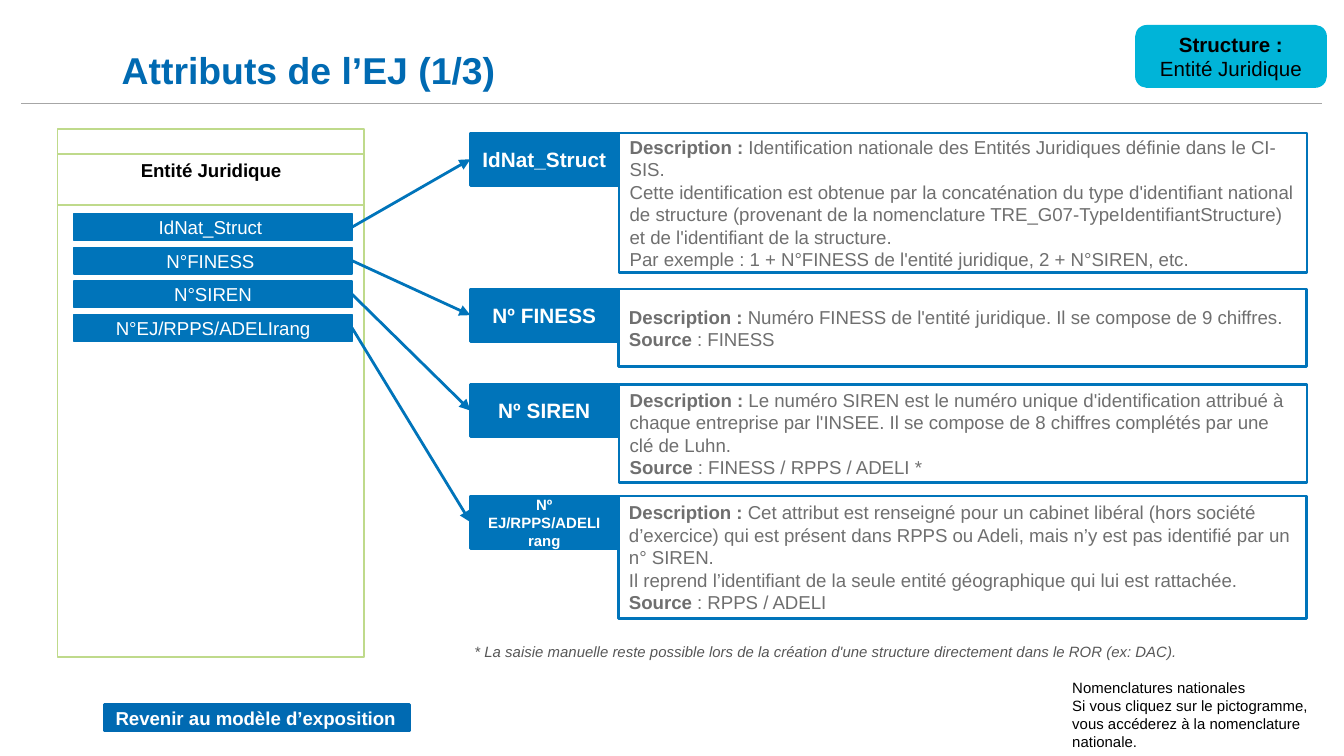
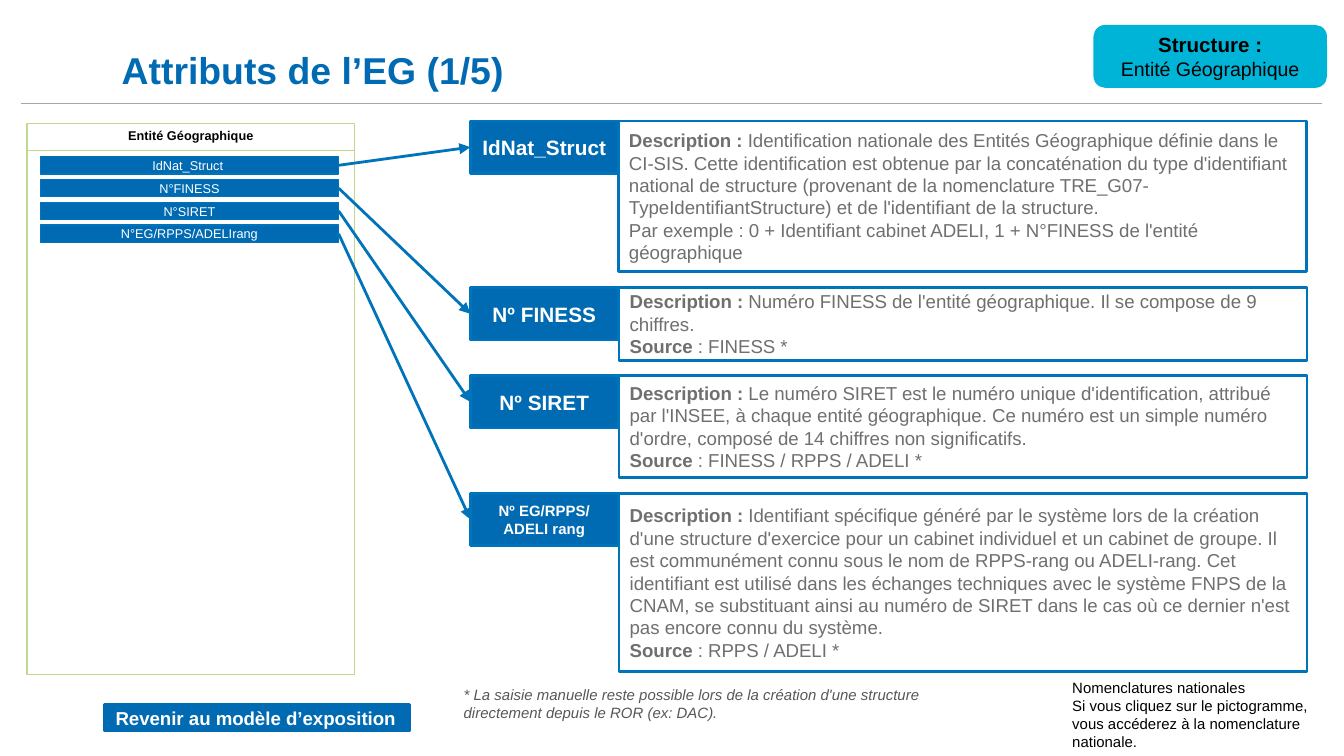
from dataclasses import dataclass
from typing import NamedTuple

import pptx
import pptx.dml.color
import pptx.enum.shapes
import pptx.enum.text
import pptx.oxml.ns
import pptx.util
from lxml import etree

EMU_PER_PX = 4572  # 200 px to the inch
FONT = "Arial"
BLUE, DARK_BLUE, CYAN, LIME = "0074BA", "006AB2", "00B4D8", "BFDA8B"
WHITE, BLACK, RULE_GREY, TEXT_GREY, NOTE_GREY = "FFFFFF", "000000", "A6A6A6", "6F6F6F", "575757"

RECT = pptx.enum.shapes.MSO_SHAPE.RECTANGLE
ROUNDED = pptx.enum.shapes.MSO_SHAPE.ROUNDED_RECTANGLE
STRAIGHT = pptx.enum.shapes.MSO_CONNECTOR.STRAIGHT
LEFT, CENTER = pptx.enum.text.PP_ALIGN.LEFT, pptx.enum.text.PP_ALIGN.CENTER
TOP = pptx.enum.text.MSO_ANCHOR.TOP
MIDDLE = pptx.enum.text.MSO_ANCHOR.MIDDLE
BOTTOM = pptx.enum.text.MSO_ANCHOR.BOTTOM

TAG_LEFT, TAG_WIDTH, TAG_HEIGHT = 700, 220, 78
DETAIL_WIDTH = 1024
BADGE_RIGHT = 1972


class Area(NamedTuple):
    left: int
    top: int
    width: int
    height: int


class Line(NamedTuple):
    """A paragraph: a bold lead followed by regular text."""
    lead: str
    rest: str


class Style(NamedTuple):
    size: float
    color: str
    bold: bool = False
    italic: bool = False
    align: int = LEFT
    anchor: int = MIDDLE
    inset: tuple[int, int] = (16, 24)


@dataclass(frozen=True)
class Attribute:
    field: str
    tag: str
    top: int
    height: int
    detail: list[Line]
    tag_size: float = 11.1
    detail_left: int = 921


@dataclass(frozen=True)
class EntityPage:
    title: str
    entity: str
    badge_width: int
    badge_size: float
    fill: str
    panel: Area
    header: Area
    header_style: Style
    first_field: Area
    field_pitch: int
    field_style: Style
    note: str
    note_area: Area
    attributes: list[Attribute]


def px(length: int) -> int:
    return length * EMU_PER_PX


def rgb(color: str) -> pptx.dml.color.RGBColor:
    return pptx.dml.color.RGBColor.from_string(color)


def format_run(span, style: Style, bold: bool) -> None:
    span.font.name = FONT
    span.font.size = pptx.util.Pt(style.size)
    span.font.bold = bold
    span.font.italic = style.italic
    span.font.color.rgb = rgb(style.color)


def write(box, lines: list[str | Line], style: Style) -> None:
    frame = box.text_frame
    frame.word_wrap = True
    frame.vertical_anchor = style.anchor
    frame.margin_left = frame.margin_right = px(style.inset[0])
    frame.margin_top = frame.margin_bottom = px(style.inset[1])
    for index, line in enumerate(lines):
        para = frame.add_paragraph() if index else frame.paragraphs[0]
        para.alignment = style.align
        if isinstance(line, str):
            para.text = line
            format_run(para.runs[0], style, style.bold)
            continue
        for text, bold in ((line.lead, True), (line.rest, False)):
            if text:
                span = para.add_run()
                span.text = text
                format_run(span, style, bold)


def add_box(page, area: Area, fill: str | None, line: str, weight: float, kind=RECT):
    box = page.shapes.add_shape(kind, *map(px, area))
    box.shadow.inherit = False
    if fill:
        box.fill.solid()
        box.fill.fore_color.rgb = rgb(fill)
    else:
        box.fill.background()
    box.line.color.rgb = rgb(line)
    box.line.width = pptx.util.Pt(weight)
    return box


def add_text(page, area: Area, lines: list[str], style: Style, grow: bool = False):
    box = page.shapes.add_textbox(*map(px, area))
    write(box, lines, style)
    if grow:
        box.text_frame.auto_size = pptx.enum.text.MSO_AUTO_SIZE.SHAPE_TO_FIT_TEXT
    return box


def add_line(page, start: tuple[int, int], end: tuple[int, int], color: str, weight: float):
    line = page.shapes.add_connector(STRAIGHT, *map(px, start + end))
    line.line.color.rgb = rgb(color)
    line.line.width = pptx.util.Pt(weight)
    etree.SubElement(line._element.spPr, pptx.oxml.ns.qn("a:effectLst"))
    return line


def add_arrow(page, source, target) -> None:
    """Join the right side of source to the left side of target."""
    arrow = add_line(page, (0, 0), (0, 0), BLUE, 1.5)
    arrow.begin_connect(source, 3)
    arrow.end_connect(target, 1)
    etree.SubElement(arrow.line._get_or_add_ln(), pptx.oxml.ns.qn("a:tailEnd"), type="triangle")


def add_frame(page, content: EntityPage) -> None:
    """Draw the title, rule, badge and footer common to all pages."""
    add_line(page, (32, 154), (1968, 154), RULE_GREY, 0.25)
    title = add_text(page, Area(181, 19, 1764, 118), [content.title],
                     Style(20, DARK_BLUE, bold=True, anchor=BOTTOM, inset=(0, 0)))
    title.text_frame.paragraphs[0].line_spacing = pptx.util.Pt(22)

    area = Area(BADGE_RIGHT - content.badge_width, 40, content.badge_width, 88)
    badge = add_box(page, area, CYAN, CYAN, 2, ROUNDED)
    write(badge, [Line("Structure :", ""), Line("", content.entity)],
          Style(11, BLACK, align=CENTER, inset=(20, 10)))
    badge.text_frame.paragraphs[1].runs[0].font.size = pptx.util.Pt(content.badge_size)

    add_text(page, Area(1576, 1000, 434, 128),
             ["Nomenclatures nationales",
              "Si vous cliquez sur le pictogramme, vous accéderez à la nomenclature nationale."],
             Style(8, BLACK, anchor=TOP, inset=(20, 10)), grow=True)
    add_text(page, content.note_area, [content.note],
             Style(8, NOTE_GREY, italic=True), grow=True)
    back = add_box(page, Area(156, 1048, 454, 40), DARK_BLUE, DARK_BLUE, 1.5)
    write(back, ["Revenir au modèle d’exposition"], Style(10, WHITE, bold=True))


def add_attribute(page, content: EntityPage, index: int, attribute: Attribute) -> None:
    field_area = content.first_field._replace(
        top=content.first_field.top + index * content.field_pitch)
    field = add_box(page, field_area, content.fill, BLUE, 0.75)
    write(field, [attribute.field], content.field_style)

    tag = add_box(page, Area(TAG_LEFT, attribute.top, TAG_WIDTH, TAG_HEIGHT),
                  content.fill, BLUE, 1.5)
    write(tag, attribute.tag.split("\n"),
          Style(attribute.tag_size, WHITE, bold=True, align=CENTER))
    detail_area = Area(attribute.detail_left, attribute.top, DETAIL_WIDTH, attribute.height)
    detail = add_box(page, detail_area, None, BLUE, 1.5)
    write(detail, attribute.detail, Style(10, TEXT_GREY))
    add_arrow(page, field, tag)


def add_page(deck, content: EntityPage) -> None:
    page = deck.slides.add_slide(deck.slide_layouts[6])
    add_frame(page, content)
    add_box(page, content.panel, None, LIME, 0.75)
    header = add_box(page, content.header, None, LIME, 0.75)
    write(header, [content.entity], content.header_style)
    for index, attribute in enumerate(content.attributes):
        add_attribute(page, content, index, attribute)


def described(text: str) -> Line:
    return Line("Description : ", text)


def source(text: str) -> Line:
    return Line("Source", f" : {text}")


LEGAL_ENTITY = EntityPage(
    title="Attributs de l’EJ (1/3)", entity="Entité Juridique",
    badge_width=280, badge_size=11, fill=BLUE,
    panel=Area(86, 192, 456, 786), header=Area(86, 229, 456, 76),
    header_style=Style(10, BLACK, bold=True, align=CENTER, anchor=TOP, inset=(8, 8)),
    first_field=Area(110, 318, 414, 40), field_pitch=50,
    field_style=Style(10, WHITE, align=CENTER, inset=(8, 40)),
    note="* La saisie manuelle reste possible lors de la création d'une structure "
         "directement dans le ROR (ex: DAC).",
    note_area=Area(690, 932, 1284, 74),
    attributes=[
        Attribute("IdNat_Struct ", "IdNat_Struct", 198, 208, [
            described("Identification nationale des Entités Juridiques définie dans le CI-SIS."),
            Line("", "Cette identification est obtenue par la concaténation du type "
                     "d'identifiant national de structure (provenant de la nomenclature "
                     "TRE_G07-TypeIdentifiantStructure) et de l'identifiant de la structure."),
            Line("", "Par exemple : 1 + N°FINESS de l'entité juridique, 2 + N°SIREN, etc.")]),
        Attribute("N°FINESS ", "Nº FINESS", 430, 116, [
            described("Numéro FINESS de l'entité juridique. Il se compose de 9 chiffres."),
            source("FINESS")], detail_left=920),
        Attribute("N°SIREN", "Nº SIREN", 572, 146, [
            described("Le numéro SIREN est le numéro unique d'identification attribué à chaque "
                      "entreprise par l'INSEE. Il se compose de 8 chiffres complétés par une "
                      "clé de Luhn."),
            source("FINESS / RPPS / ADELI *")]),
        Attribute("N°EJ/RPPS/ADELIrang", "Nº EJ/RPPS/ADELI rang", 738, 182, [
            described("Cet attribut est renseigné pour un cabinet libéral (hors société "
                      "d’exercice) qui est présent dans RPPS ou Adeli, mais n’y est pas "
                      "identifié par un n° SIREN."),
            Line("", "Il reprend l’identifiant de la seule entité géographique qui lui est "
                     "rattachée."),
            source("RPPS / ADELI")], tag_size=8, detail_left=920),
    ])

GEOGRAPHIC_ENTITY = EntityPage(
    title="Attributs de l’EG (1/5)", entity="Entité Géographique",
    badge_width=342, badge_size=10.5, fill=DARK_BLUE,
    panel=Area(40, 224, 488, 780), header=Area(40, 184, 488, 40),
    header_style=Style(6.8, BLACK, bold=True, align=CENTER, anchor=TOP, inset=(6, 6)),
    first_field=Area(60, 233, 444, 26), field_pitch=34,
    field_style=Style(6.8, WHITE, align=CENTER, inset=(6, 30)),
    note="* La saisie manuelle reste possible lors de la création d'une structure "
         "directement depuis le ROR (ex: DAC).",
    note_area=Area(674, 996, 790, 102),
    attributes=[
        Attribute("IdNat_Struct ", "IdNat_Struct", 180, 224, [
            described("Identification nationale des Entités Géographique définie dans le "
                      "CI-SIS. Cette identification est obtenue par la concaténation du type "
                      "d'identifiant national de structure (provenant de la nomenclature "
                      "TRE_G07-TypeIdentifiantStructure) et de l'identifiant de la structure."),
            Line("", "Par exemple : 0 + Identifiant cabinet ADELI, 1 + N°FINESS de l'entité "
                     "géographique")], detail_left=920),
        Attribute("N°FINESS", "Nº FINESS", 428, 108, [
            described("Numéro FINESS de l'entité géographique. Il se compose de 9 chiffres."),
            source("FINESS *")]),
        Attribute("N°SIRET", "Nº SIRET", 559, 152, [
            described("Le numéro SIRET est le numéro unique d'identification, attribué par "
                      "l'INSEE, à chaque entité géographique. Ce numéro est un simple numéro "
                      "d'ordre, composé de 14 chiffres non significatifs."),
            source("FINESS / RPPS / ADELI *")]),
        Attribute("N°EG/RPPS/ADELIrang", "Nº EG/RPPS/\nADELI rang", 734, 266, [
            described("Identifiant spécifique généré par le système lors de la création d'une "
                      "structure d'exercice pour un cabinet individuel et un cabinet de groupe. "
                      "Il est communément connu sous le nom de RPPS-rang ou ADELI-rang. Cet "
                      "identifiant est utilisé dans les échanges techniques avec le système "
                      "FNPS de la CNAM, se substituant ainsi au numéro de SIRET dans le cas où "
                      "ce dernier n'est pas encore connu du système."),
            source("RPPS / ADELI *")], tag_size=8),
    ])


def main() -> None:
    deck = pptx.Presentation()
    deck.slide_width, deck.slide_height = px(2000), px(1125)
    for content in (LEGAL_ENTITY, GEOGRAPHIC_ENTITY):
        add_page(deck, content)
    deck.save("out.pptx")


if __name__ == "__main__":
    main()
